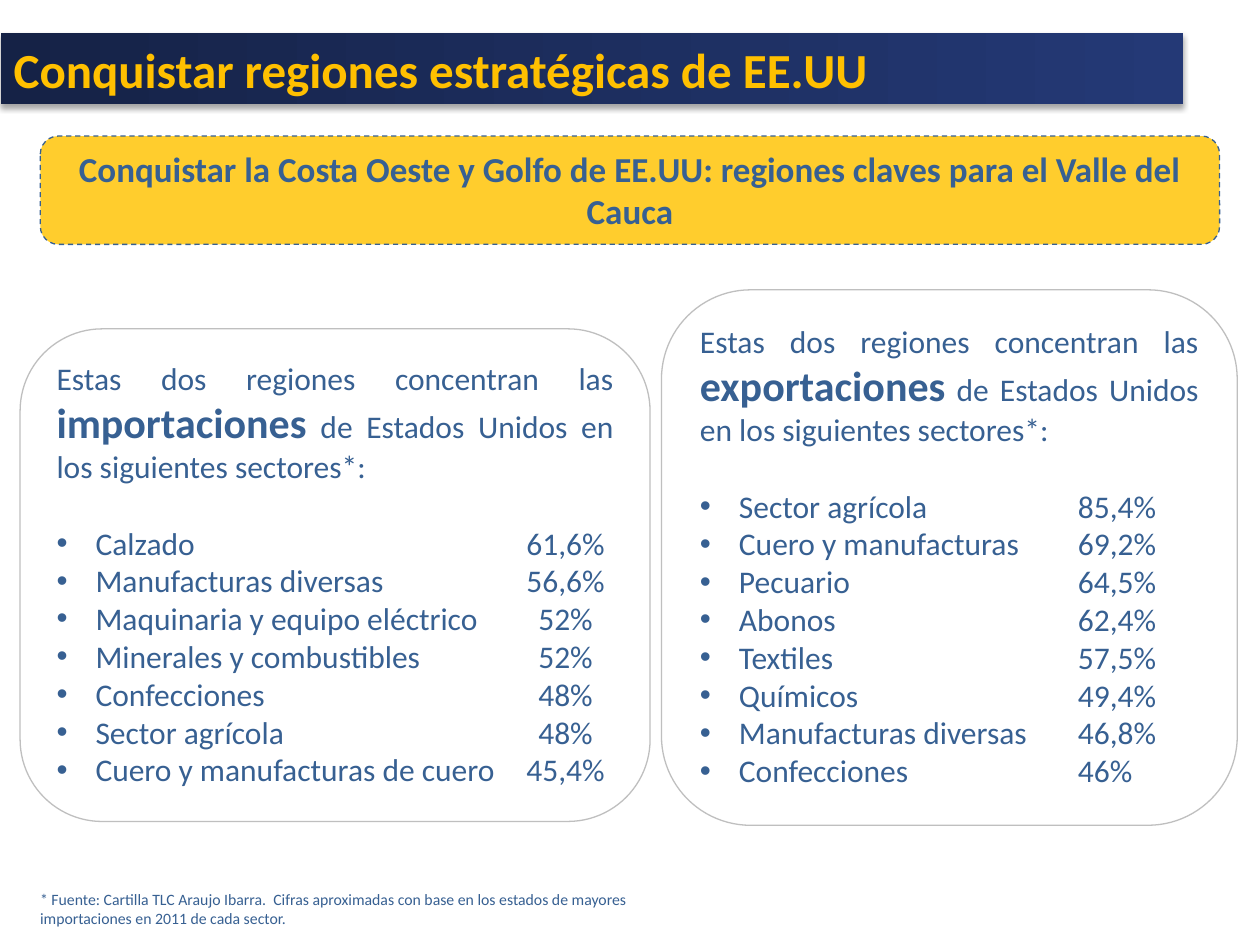
"""Build the slide on strategic trade regions of the United States."""
import pptx
import pptx.util
import pptx.dml.color
import pptx.enum.dml
import pptx.enum.shapes
import pptx.enum.text
import pptx.oxml
import pptx.oxml.ns
from dataclasses import dataclass


@dataclass(frozen=True)
class Theme:
    font: str = "Calibri"
    ink: str = "376092"
    gold: str = "FFC000"
    sun: str = "FFCD2D"
    white: str = "FFFFFF"
    edge: str = "BFBFBF"
    navy: tuple = ("152246", "243976")
    title: int = 28
    lead: int = 24
    head: int = 20
    body: int = 18
    note: int = 9
    gap: float = 22
    line: float = 0.75


LOOK = Theme()
COLS, ROWS = 100, 75
WIDE, HIGH = pptx.util.Inches(10), pptx.util.Inches(7.5)
DENT = pptx.util.Inches(0.31)

TITLE = "Conquistar regiones estratégicas de EE.UU"
CLAIM = ("Conquistar la Costa Oeste y Golfo de EE.UU: "
         "regiones claves para el Valle del Cauca")
NOTE = ("* Fuente: Cartilla TLC Araujo Ibarra.  Cifras aproximadas con base en "
        "los estados de mayores importaciones en 2011 de cada sector.")
OPEN = "Estas dos regiones concentran las "
CLOSE = " de Estados Unidos en los siguientes sectores*:"
CARDS = [
    {"area": (1.6, 26.1, 50, 39.1), "word": "importaciones",
     "tab": (4.04, "ctr"),
     "rows": [("Calzado", "61,6%"), ("Manufacturas diversas", "56,6%"),
              ("Maquinaria y equipo eléctrico", "52%"),
              ("Minerales y combustibles", "52%"), ("Confecciones", "48%"),
              ("Sector agrícola", "48%"),
              ("Cuero y manufacturas de cuero", "45,4%")]},
    {"area": (52.5, 23, 45.7, 42.5), "word": "exportaciones",
     "tab": (3, "l"),
     "rows": [("Sector agrícola", "85,4%"), ("Cuero y manufacturas", "69,2%"),
              ("Pecuario", "64,5%"), ("Abonos", "62,4%"),
              ("Textiles", "57,5%"), ("Químicos", "49,4%"),
              ("Manufacturas diversas", "46,8%"), ("Confecciones", "46%")]},
]

KIND = pptx.enum.shapes.MSO_SHAPE
SIDE = pptx.enum.text.PP_ALIGN
FIT = pptx.enum.text.MSO_AUTO_SIZE
TOP = pptx.enum.text.MSO_ANCHOR.TOP
MID = pptx.enum.text.MSO_ANCHOR.MIDDLE


def tint(code):
    return pptx.dml.color.RGBColor.from_string(code)


def place(area):
    left, top, width, height = area
    return (round(left * WIDE / COLS), round(top * HIGH / ROWS),
            round(width * WIDE / COLS), round(height * HIGH / ROWS))


def shape(slide, kind, area, fill=None, line=None):
    box = slide.shapes.add_shape(kind, *place(area))
    box.shadow.inherit = False
    if fill:
        box.fill.solid()
        box.fill.fore_color.rgb = tint(fill)
    if line:
        box.line.color.rgb = tint(line)
        box.line.width = pptx.util.Pt(LOOK.line)
    else:
        box.line.fill.background()
    return box


def frame(box, anchor=TOP, grow=True):
    text = box.text_frame
    text.word_wrap = True
    text.vertical_anchor = anchor
    text.auto_size = FIT.SHAPE_TO_FIT_TEXT if grow else FIT.NONE
    return text


def write(para, runs, align=SIDE.LEFT, color=LOOK.ink):
    para.alignment = align
    for words, size, bold in runs:
        run = para.add_run()
        run.text = words
        run.font.name = LOOK.font
        run.font.size = pptx.util.Pt(size)
        run.font.bold = bold
        run.font.color.rgb = tint(color)


def bullet(para, tab):
    spot, align = tab
    props = para._p.get_or_add_pPr()
    props.set("marL", str(DENT))
    props.set("indent", str(-DENT))
    space = pptx.oxml.ns.nsdecls("a")
    for part in (
        f'<a:buFont {space} typeface="Arial"/>',
        f'<a:buChar {space} char="•"/>',
        f'<a:tabLst {space}><a:tab pos="{pptx.util.Inches(spot)}" '
        f'algn="{align}"/></a:tabLst>',
    ):
        props.append(pptx.oxml.parse_xml(part))


def shade(box):
    space = pptx.oxml.ns.nsdecls("a")
    blur, far = pptx.util.Pt(3), pptx.util.Pt(2)
    list_ = box._element.spPr.find(pptx.oxml.ns.qn("a:effectLst"))
    list_.append(pptx.oxml.parse_xml(
        f'<a:outerShdw {space} blurRad="{blur}" dist="{far}" dir="5400000" '
        'rotWithShape="0"><a:srgbClr val="000000"><a:alpha val="35000"/>'
        '</a:srgbClr></a:outerShdw>'))


def banner(slide):
    box = shape(slide, KIND.RECTANGLE, (0.1, 2.6, 93.8, 5.7))
    box.fill.gradient()
    box.fill.gradient_angle = 0
    for stop, code in zip(box.fill.gradient_stops, LOOK.navy):
        stop.color.rgb = tint(code)
    shade(box)
    write(frame(box, MID, False).paragraphs[0],
          [(TITLE, LOOK.title, True)], color=LOOK.gold)


def card(slide, data):
    box = shape(slide, KIND.ROUNDED_RECTANGLE, data["area"],
                LOOK.white, LOOK.edge)
    text = frame(box)
    write(text.paragraphs[0],
          [(OPEN, LOOK.body, False), (data["word"], LOOK.lead, True),
           (CLOSE, LOOK.body, False)], SIDE.JUSTIFY)
    for rank, (name, share) in enumerate(data["rows"]):
        para = text.add_paragraph()
        if rank == 0:
            para.space_before = pptx.util.Pt(LOOK.gap)
        bullet(para, data["tab"])
        write(para, [(f"{name}\t{share}", LOOK.body, False)])


def main():
    deck = pptx.Presentation()
    deck.slide_width, deck.slide_height = WIDE, HIGH
    slide = deck.slides.add_slide(deck.slide_layouts[6])
    banner(slide)
    for data in CARDS:
        card(slide, data)
    note = slide.shapes.add_textbox(*place((2.2, 70.1, 50, 4)))
    write(frame(note).paragraphs[0], [(NOTE, LOOK.note, False)])
    claim = shape(slide, KIND.ROUNDED_RECTANGLE, (3.2, 10.8, 93.6, 8.6),
                  LOOK.sun, LOOK.ink)
    claim.line.dash_style = pptx.enum.dml.MSO_LINE.DASH
    write(frame(claim).paragraphs[0], [(CLAIM, LOOK.head, True)], SIDE.CENTER)
    deck.save("out.pptx")


if __name__ == "__main__":
    main()
